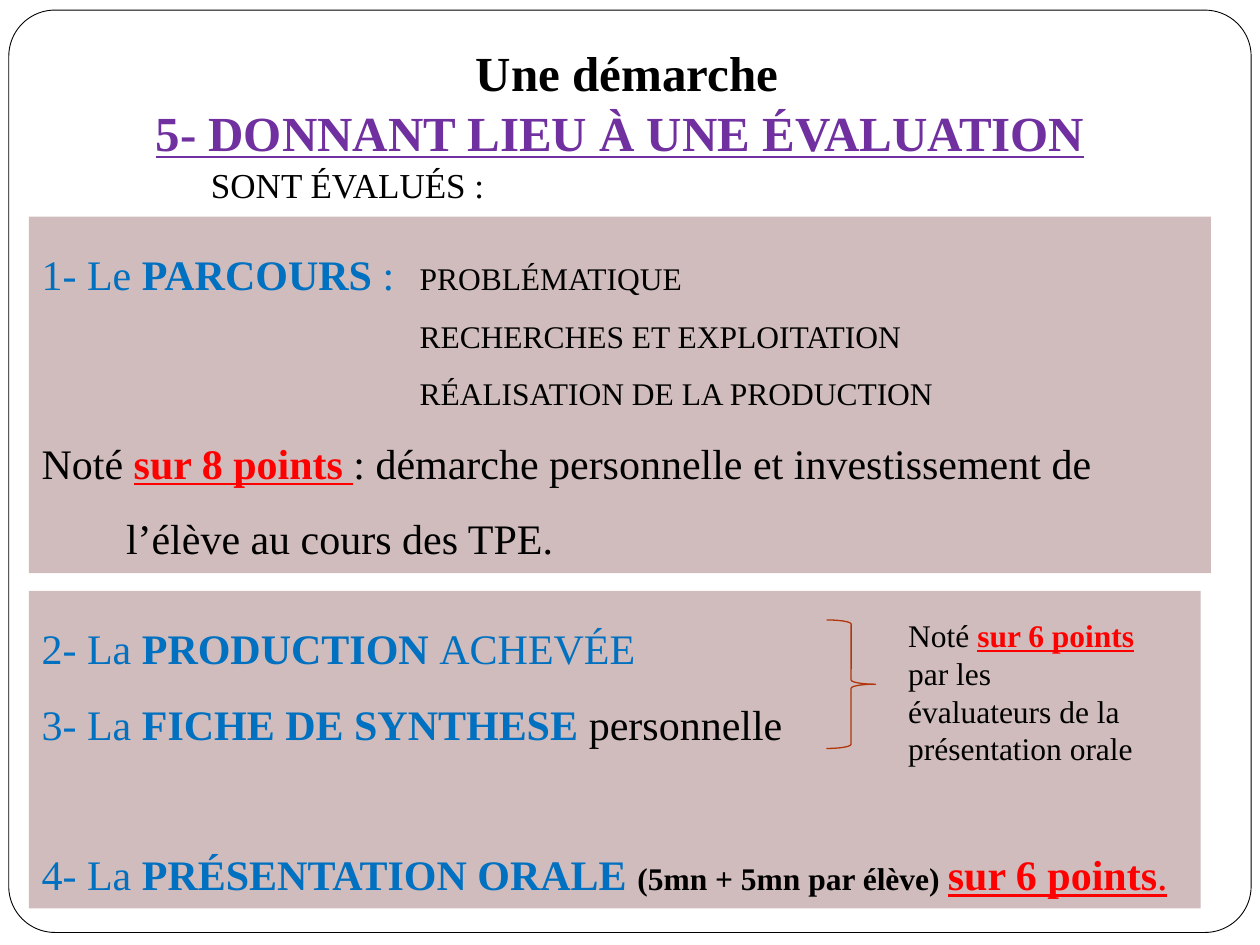
from pptx import Presentation
from pptx import util as u
from pptx.dml.color import RGBColor
from pptx.enum import shapes, text
from pptx.oxml.ns import qn
from lxml import etree

BLACK, WHITE, BLUE, RED = "000000", "FFFFFF", "0070C0", "FF0000"
PURPLE, PANEL, RUST = "7030A0", "D0BCBC", "B1360B"
CENTER, JUSTIFY = text.PP_ALIGN.CENTER, text.PP_ALIGN.JUSTIFY


def color(value):
    return RGBColor.from_string(value)


def span(words, size=24, ink=BLACK, **style):
    return words, ink, {"name": "Times New Roman", "size": u.Pt(size), **style}


def line(*spans, indent=0, first=0, **style):
    return spans, indent, first, {"space_before": u.Pt(0), **style}


class Page:
    def __init__(self, deck, layout):
        self.deck = deck
        self.page = deck.slides.add_slide(deck.slide_layouts[layout])
        self.title, self.upper, self.lower = self.page.placeholders

    def area(self, left, top, width, height):
        across, down = self.deck.slide_width, self.deck.slide_height
        return [int(share * side / 100) for share, side in
                zip((left, top, width, height), (across, down, across, down))]

    def fill_text(self, box, lines):
        frame = box.text_frame
        settings = {"word_wrap": True, "auto_size": text.MSO_AUTO_SIZE.NONE,
                    "vertical_anchor": text.MSO_ANCHOR.TOP}
        for name, value in settings.items():
            setattr(frame, name, value)
        for number, (spans, indent, first, style) in enumerate(lines):
            para = frame.add_paragraph() if number else frame.paragraphs[0]
            for name, value in style.items():
                setattr(para, name, value)
            properties = para._p.get_or_add_pPr()
            properties.set("marL", str(u.Inches(indent)))
            properties.set("indent", str(u.Inches(first)))
            etree.SubElement(properties, qn("a:buNone"))
            for words, ink, font in spans:
                run = para.add_run()
                run.text = words
                run.font.color.rgb = color(ink)
                for name, value in font.items():
                    setattr(run.font, name, value)

    def place(self, box, area, lines, fill=None):
        for name, value in zip(("left", "top", "width", "height"), self.area(*area)):
            setattr(box, name, value)
        if fill:
            box.fill.solid()
            box.fill.fore_color.rgb = color(fill)
        self.fill_text(box, lines)

    def label(self, area, lines):
        self.fill_text(self.page.shapes.add_textbox(*self.area(*area)), lines)

    def outline(self, kind, area, ink, weight, fill=None):
        shape = self.page.shapes.add_shape(kind, *self.area(*area))
        shape.shadow.inherit = False
        shape.line.color.rgb = color(ink)
        shape.line.width = u.Pt(weight)
        if fill:
            shape.fill.solid()
            shape.fill.fore_color.rgb = color(fill)
        else:
            shape.fill.background()
        return shape

    def border(self, area):
        shape = self.outline(shapes.MSO_SHAPE.ROUNDED_RECTANGLE, area, BLACK, 0.5, WHITE)
        shape.adjustments[0] = 0.05
        self.title._element.addprevious(shape._element)


def main():
    deck = Presentation()
    deck.slide_width, deck.slide_height = u.Inches(10), u.Inches(7.5)
    page = Page(deck, 3)
    strong = {"bold": True}
    marked = {"bold": True, "underline": True}
    spaced = {"line_spacing": 1.5}
    even = {"alignment": JUSTIFY, **spaced}

    page.border((0.7, 1.07, 98.6, 97.6))
    page.place(page.title, (2.3, 3.07, 93.8, 14.8), [
        line(span(" ", 32, **strong), span("Une démarche", 28, **strong), alignment=CENTER),
        line(span("5- DONNANT LIEU À UNE ÉVALUATION", 28, PURPLE, **marked), alignment=CENTER),
    ])
    page.place(page.lower, (2.3, 62.53, 93, 33.6), [
        line(span("2- La ", ink=BLUE), span("PRODUCTION ", ink=BLUE, **strong),
             span("ACHEVÉE", ink=BLUE), **even),
        line(span("3- La ", ink=BLUE), span("FICHE DE SYNTHESE ", ink=BLUE, **strong),
             span("personnelle"), **even),
        line(span("4- La ", ink=BLUE), span("PRÉSENTATION ORALE ", ink=BLUE, **strong),
             span("(5mn + 5mn par élève) ", 18, **strong),
             span("sur 6 points", ink=RED, **marked),
             span(".", ink=RED, underline=True), **{**even, "space_before": u.Pt(43)}),
    ], PANEL)
    steps = ["RECHERCHES ET EXPLOITATION", "RÉALISATION DE LA PRODUCTION"]
    page.place(page.upper, (2.3, 22.93, 93.8, 37.73), [
        line(span("1- Le ", ink=BLUE), span("PARCOURS ", ink=BLUE, **strong),
             span(":\t", ink=BLUE), span("PROBLÉMATIQUE", 18), **even),
        *[line(span(step, 18), indent=3, **spaced) for step in steps],
        line(span("Noté "), span("sur 8 points ", ink=RED, **marked),
             span(": démarche personnelle et investissement de l’élève au cours des TPE."),
             indent=0.67, first=-0.67, **spaced),
    ], PANEL)
    page.label((2.3, 16.67, 50.6, 5.87), [line(span("SONT ÉVALUÉS :", 20), alignment=CENTER)])
    page.outline(shapes.MSO_SHAPE.RIGHT_BRACE, (65.6, 65.6, 3.9, 13.6), RUST, 0.75)
    page.label((71.1, 64.53, 20.3, 17.47), [
        line(span("Noté ", 18), span("sur 6 points ", 18, RED, **marked),
             span("par les évaluateurs de la présentation orale", 18)),
    ])
    deck.save("out.pptx")


if __name__ == "__main__":
    main()
